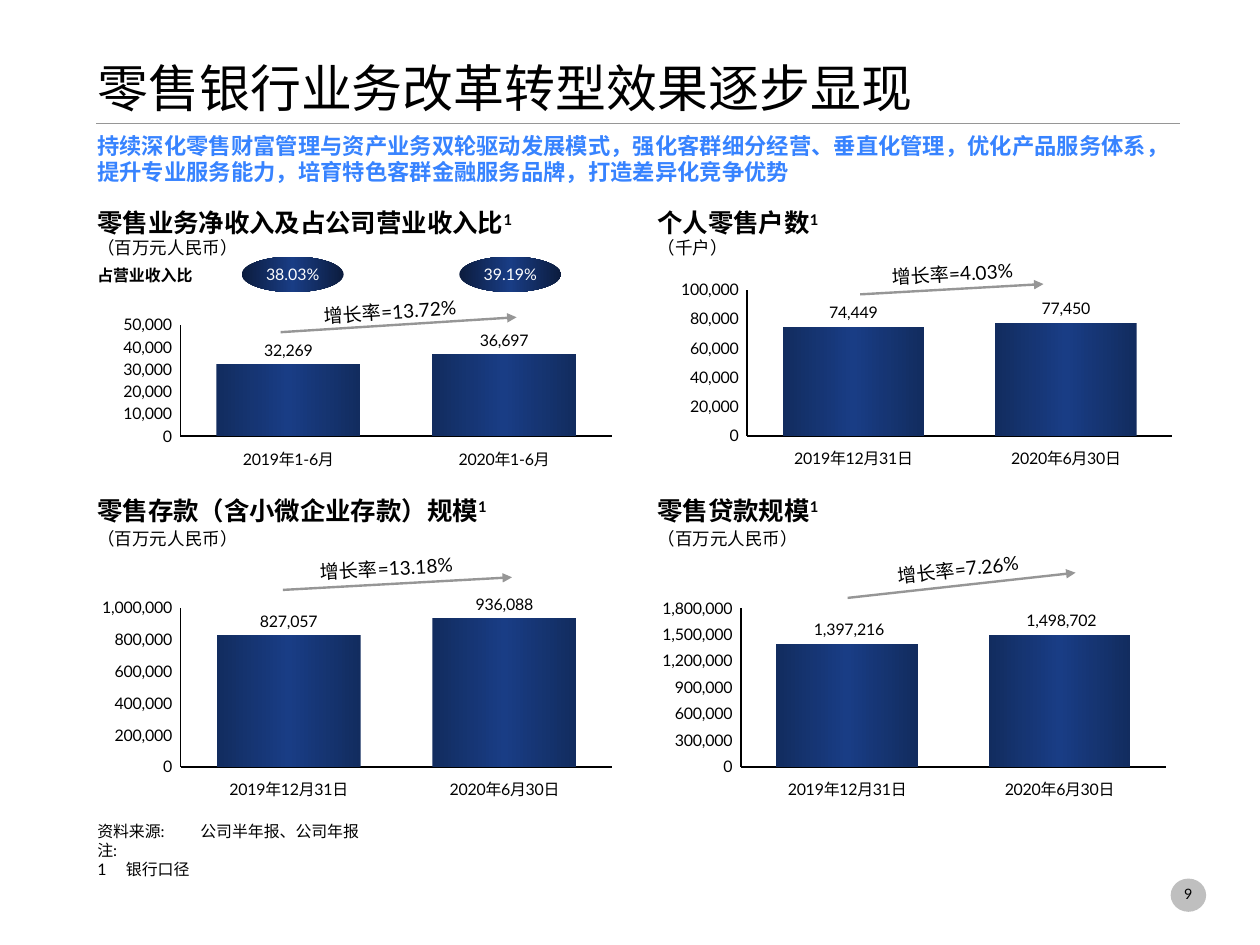
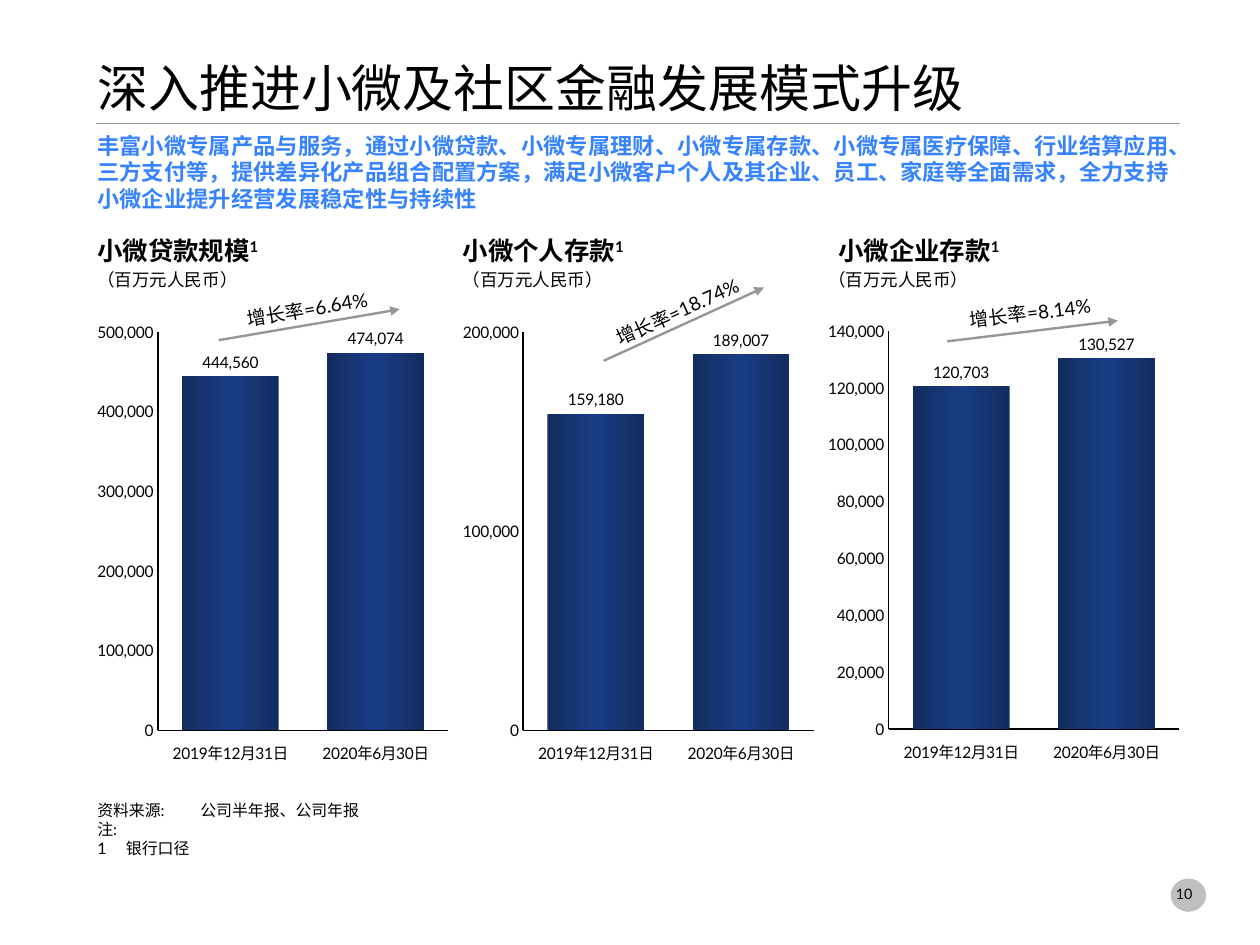
from dataclasses import dataclass
from copy import deepcopy
from math import atan2, degrees

from lxml import etree
from pptx import Presentation
from pptx.chart.data import CategoryChartData
from pptx.dml.color import RGBColor
from pptx.enum.chart import (XL_CHART_TYPE, XL_LABEL_POSITION, XL_TICK_LABEL_POSITION,
                             XL_TICK_MARK)
from pptx.enum.shapes import MSO_CONNECTOR, MSO_SHAPE
from pptx.enum.text import MSO_ANCHOR, MSO_AUTO_SIZE, PP_ALIGN
from pptx.oxml.ns import qn
from pptx.util import Inches, Pt

COLUMN = XL_CHART_TYPE.COLUMN_CLUSTERED
OUTSIDE = XL_LABEL_POSITION.OUTSIDE_END
LOW = XL_TICK_LABEL_POSITION.LOW
NO_TICK = XL_TICK_MARK.NONE
STRAIGHT = MSO_CONNECTOR.STRAIGHT
OVAL = MSO_SHAPE.OVAL
TOP, MIDDLE, BOTTOM = MSO_ANCHOR.TOP, MSO_ANCHOR.MIDDLE, MSO_ANCHOR.BOTTOM
LEFT, CENTER, RIGHT = PP_ALIGN.LEFT, PP_ALIGN.CENTER, PP_ALIGN.RIGHT


@dataclass(frozen=True)
class Theme:
    font: str = "Lato"
    ink: str = "000000"
    white: str = "FFFFFF"
    lead: str = "3783FF"
    grey: str = "969696"
    disc: str = "BFBFBF"
    core: str = "193D85"
    bar: str = "122C5F"
    pill: str = "0C1C3E"
    title: int = 32
    head: int = 16
    sub: int = 14
    rate: int = 12
    unit: int = 11
    small: int = 10
    page: int = 9


@dataclass(frozen=True)
class Panel:
    """Chart with heading; all offsets are in cells from the panel's corner."""
    head: str
    vals: tuple
    top: int
    step: int
    rate: str
    arrow: tuple
    shift: tuple  # rate label's centre, from the arrow's middle
    plot: tuple
    chart: tuple
    drop: float  # from the heading down to the unit
    unit: str = "（百万元人民币）"
    cats: tuple = ("2019年12月31日", "2020年6月30日")
    indent: float = 0
    form: str = r"#,##0_);\(#,##0\)"


THEME = Theme()
CELL = 0.1  # grid step in inches: 110 columns by 82.5 rows
EDGE = 8.5
LABEL_FORM = r'_(* #,##0_);_(* \(#,##0\);_(* "-"??_);_('
WIDE, TALL = (45.8, 19.7), (31, 45.2)
TALL_PLOT = (0.147, 0.111, 0.841, 0.769)

RETAIL = (
    Panel("零售业务净收入及占公司营业收入比", (32269, 36697), 50000, 10000, "13.72%",
          (16, 10.9, 36.6, 9.6), (-0.75, -1.15), (0.143, 0.308, 0.823, 0.493),
          (0.7, 4.2), 2.6, cats=("2019年1-6月", "2020年1-6月")),
    Panel("个人零售户数", (74449, 77450), 100000, 20000, "4.03%",
          (17.7, 7.6, 33.7, 6.7), (0.05, -1.35), (0.171, 0.111, 0.81, 0.648),
          (0, 5), 2.6, unit="（千户）"),
    Panel("零售存款（含小微企业存款）规模", (827057, 936088), 1000000, 200000, "13.18%",
          (16.2, 8.3, 36.2, 7.2), (-0.95, -1.35), (0.159, 0.111, 0.823, 0.704),
          (0, 7.7), 2.9),
    Panel("零售贷款规模", (1397216, 1498702), 1800000, 300000, "7.26%",
          (16.6, 9, 36.5, 6.8), (-0.3, -1.4), (0.159, 0.111, 0.81, 0.704),
          (0, 7.7), 2.9),
)
MICRO = (
    Panel("小微贷款规模", (444560, 474074), 500000, 100000, "6.64%",
          (10.6, 9.2, 26.4, 6.5), (-0.15, -1.35), TALL_PLOT, (0, 3.5), 3, form="#,##0"),
    Panel("小微个人存款", (159180, 189007), 200000, 100000, "18.74%",
          (12.3, 11, 26.3, 4.6), (-0.55, -1.1), TALL_PLOT, (0, 3.5), 3, form="#,##0"),
    Panel("小微企业存款", (120703, 130527), 140000, 20000, "8.14%",
          (10.4, 9.3, 25.3, 7.5), (-0.2, -1.6), TALL_PLOT, (0, 3.4), 3, form="#,##0",
          indent=0.9),
)


def cells(*counts):
    return [Inches(count * CELL) for count in counts]


def rgb(code):
    return RGBColor.from_string(code)


def style(font, size, color=THEME.ink, bold=False):
    font.name, font.size, font.bold = THEME.font, Pt(size), bold
    font.color.rgb = rgb(color)


def setup(frame, anchor=TOP, pads=(0, 0, 0, 0), wrap=True):
    frame.word_wrap, frame.vertical_anchor = wrap, anchor
    frame.auto_size = MSO_AUTO_SIZE.NONE
    (frame.margin_left, frame.margin_top,
     frame.margin_right, frame.margin_bottom) = cells(*pads)


def write(slide, box, text, size, color=THEME.ink, bold=False, align=LEFT, **frame):
    shape = slide.shapes.add_textbox(*cells(*box))
    setup(shape.text_frame, **frame)
    para = shape.text_frame.paragraphs[0]
    para.text, para.alignment = text, align
    style(para.font, size, color, bold)
    return shape


def blend(fill, owner, rim):
    """Fill left to right: rim, core, rim."""
    fill.gradient()
    fill.gradient_angle = 0
    stops = next(owner.iter(qn("a:gsLst")))
    stops.insert(1, deepcopy(stops[0]))
    spots = ((0, rim), (0.5, THEME.core), (1, rim))
    for stop, (place, color) in zip(fill.gradient_stops, spots):
        stop.position = place
        stop.color.rgb = rgb(color)


def rule(slide, ends, width, arrow=False):
    line = slide.shapes.add_connector(STRAIGHT, *cells(*ends))
    line.line.color.rgb = rgb(THEME.grey)
    line.line.width = Pt(width)
    etree.SubElement(line.element.spPr, qn("a:effectLst"))
    if arrow:
        stroke = line.element.spPr.find(qn("a:ln"))
        etree.SubElement(stroke, qn("a:tailEnd"), type="triangle")


def oval(slide, box):
    shape = slide.shapes.add_shape(OVAL, *cells(*box))
    shape.shadow.inherit = False
    shape.line.fill.background()
    return shape


def pill(slide, box, text):
    shape = oval(slide, box)
    blend(shape.fill, shape.element, THEME.pill)
    setup(shape.text_frame, MIDDLE, (0.4,) * 4)
    para = shape.text_frame.paragraphs[0]
    para.text, para.alignment = text, CENTER
    style(para.font, THEME.small, THEME.white)


def place(chart, plot):
    """Fix the inner plot area as shares of the chart."""
    area = next(chart.element.iter(qn("c:plotArea")))
    for old in area.findall(qn("c:layout")):
        area.remove(old)
    layout = etree.Element(qn("c:layout"))
    manual = etree.SubElement(layout, qn("c:manualLayout"))
    parts = dict(layoutTarget="inner", xMode="edge", yMode="edge")
    parts.update(zip("xywh", plot))
    for name, val in parts.items():
        etree.SubElement(manual, qn(f"c:{name}"), val=str(val))
    area.insert(0, layout)


def columns(slide, box, panel):
    data = CategoryChartData()
    data.categories = panel.cats
    data.add_series("Series 1", panel.vals)
    chart = slide.shapes.add_chart(COLUMN, *cells(*box), data).chart
    chart.has_title = chart.has_legend = False
    style(chart.font, THEME.small)
    place(chart, panel.plot)

    for axis in (chart.category_axis, chart.value_axis):
        axis.has_major_gridlines = False
        axis.major_tick_mark = axis.minor_tick_mark = NO_TICK
        axis.format.line.color.rgb = rgb(THEME.ink)
        axis.format.line.width = Pt(1)
        style(axis.tick_labels.font, THEME.small)
    chart.category_axis.tick_label_position = LOW
    scale = chart.value_axis
    scale.minimum_scale, scale.maximum_scale = 0, panel.top
    scale.major_unit = panel.step
    scale.tick_labels.number_format = panel.form
    scale.tick_labels.number_format_is_linked = False

    plot = chart.plots[0]
    plot.gap_width, plot.vary_by_categories = 50, False
    plot.has_data_labels = True
    labels = plot.data_labels
    labels.show_value, labels.position = True, OUTSIDE
    labels.number_format, labels.number_format_is_linked = LABEL_FORM, False
    style(labels.font, THEME.small)
    blend(plot.series[0].format.fill, chart.element, THEME.bar)


def growth(slide, ends, shift, rate):
    """Arrow with its rate lying along it."""
    x1, y1, x2, y2 = ends
    rule(slide, ends, 1.5, arrow=True)
    width, height = 18.9, 2
    left = (x1 + x2 - width) / 2 + shift[0]
    top = (y1 + y2 - height) / 2 + shift[1]
    label = write(slide, (left, top, width, height), f"增长率={rate}", THEME.rate,
                  align=CENTER)
    label.rotation = degrees(atan2(y2 - y1, x2 - x1))


def show(slide, x, y, size, panel):
    dx, dy = panel.chart
    columns(slide, (x + dx, y + dy, *size), panel)
    pads = (0, 0, 0, 0.4)
    head = write(slide, (x + panel.indent, y, size[0], 2.6), panel.head, THEME.head,
                 bold=True, pads=pads)
    note = head.text_frame.paragraphs[0].add_run()
    note.text = "1"
    note.font.bold = True
    note.font.size = Pt(THEME.head)
    note.font.name = THEME.font
    note.font.color.rgb = rgb(THEME.ink)
    next(head.element.iter(qn("a:p")))[-1].find(qn("a:rPr")).set("baseline", "30000")
    write(slide, (x, y + panel.drop, size[0], 2.3), panel.unit, THEME.unit, pads=pads)
    x1, y1, x2, y2 = panel.arrow
    growth(slide, (x + x1, y + y1, x + x2, y + y2), panel.shift, panel.rate)


def source(slide, top):
    lines = (("资料来源: \t公司半年报、公司年报", 9), ("注: \t", 9), ("1\t银行口径", 2.5))
    shape = write(slide, (EDGE, top, 94.6, 5.6), "", THEME.small, anchor=BOTTOM,
                  pads=(0, 0.6, 0, 0))
    frame = shape.text_frame
    for index, (text, hang) in enumerate(lines):
        para = frame.add_paragraph() if index else frame.paragraphs[0]
        para.text = text
        props = para._p.get_or_add_pPr()
        indent, = cells(hang)
        props.set("marL", str(indent))
        props.set("indent", str(-indent))
        style(para.font, THEME.small)


def start(deck, title, lead, page, foot):
    """Add a slide with all that the slides share."""
    slide = deck.slides.add_slide(deck.slide_layouts[5])
    rule(slide, (8.4, 10.8, 103, 10.8), 0.75)
    disc = oval(slide, (102.2, 76.7, 3.1, 2.9))
    disc.fill.solid()
    disc.fill.fore_color.rgb = rgb(THEME.disc)
    head = slide.shapes.title
    head.left, head.top, head.width, head.height = cells(EDGE, 0, 94.6, 10.3)
    setup(head.text_frame, BOTTOM)
    para = head.text_frame.paragraphs[0]
    para.text, para.alignment = title, LEFT
    style(para.font, THEME.title)
    write(slide, (EDGE, 11.5, 94.2, 7.1), lead, THEME.sub, THEME.lead, bold=True)
    source(slide, foot)
    write(slide, (99.6, 74.7, 4.5, 4.1), page, THEME.page, align=RIGHT,
          anchor=BOTTOM, wrap=False)
    return slide


def main():
    deck = Presentation()
    deck.slide_width, deck.slide_height = cells(110, 82.5)

    slide = start(deck, "零售银行业务改革转型效果逐步显现",
                  "持续深化零售财富管理与资产业务双轮驱动发展模式，强化客群细分经营、垂直化管理，"
                  "优化产品服务体系，提升专业服务能力，培育特色客群金融服务品牌，打造差异化竞争优势",
                  "9", 71.1)
    for index, panel in enumerate(RETAIL):
        row, col = divmod(index, 2)
        show(slide, EDGE + 48.9 * col, 18.1 + 25.1 * row, WIDE, panel)
    write(slide, (EDGE, 22.7, 9.7, 2.7), "占营业收入比", THEME.small, bold=True,
          pads=(0, 0.5, 0, 0.5))
    for index, share in enumerate(("38.03%", "39.19%")):
        pill(slide, (21.1 + 19 * index, 22.4, 8.9, 3.1), share)

    slide = start(deck, "深入推进小微及社区金融发展模式升级",
                  "丰富小微专属产品与服务，通过小微贷款、小微专属理财、小微专属存款、小微专属医疗保障、"
                  "行业结算应用、三方支付等，提供差异化产品组合配置方案，满足小微客户个人及其企业、"
                  "员工、家庭等全面需求，全力支持小微企业提升经营发展稳定性与持续性",
                  "10", 69.3)
    for col, panel in enumerate(MICRO):
        show(slide, EDGE + 31.9 * col, 20.5, TALL, panel)

    deck.save("out.pptx")


if __name__ == "__main__":
    main()
